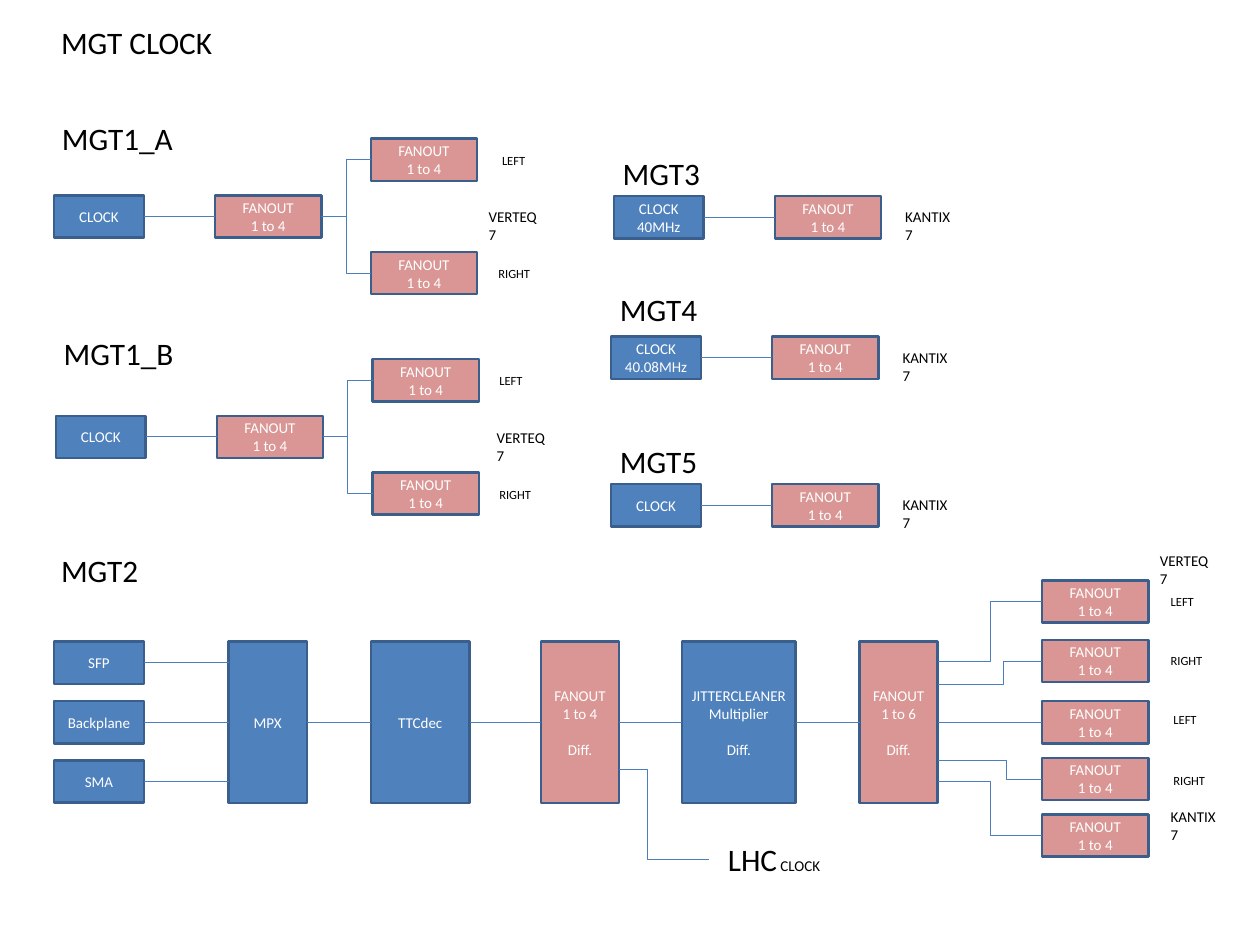
from lxml import etree
from pptx import Presentation
from pptx.dml.color import RGBColor
from pptx.enum.shapes import MSO_CONNECTOR, MSO_SHAPE
from pptx.enum.text import MSO_ANCHOR, MSO_AUTO_SIZE, PP_ALIGN
from pptx.oxml.ns import qn
from pptx.util import Inches, Pt

STRAIGHT, ELBOW = MSO_CONNECTOR.STRAIGHT, MSO_CONNECTOR.ELBOW
RECTANGLE = MSO_SHAPE.RECTANGLE
MIDDLE = MSO_ANCHOR.MIDDLE
GROW = MSO_AUTO_SIZE.SHAPE_TO_FIT_TEXT
LEFT, CENTER = PP_ALIGN.LEFT, PP_ALIGN.CENTER
LEFT_SIDE, RIGHT_SIDE = 1, 3

COLORS = {"source": "4F81BD", "fanout": "D99694", "border": "3A5F8C",
          "wire": "4B7EBC", "light": "FFFFFF", "dark": "000000"}
FONT = "Calibri"
TITLE, BODY, SMALL = 25, 12, 10
SLIDE_W, SLIDE_H = Inches(14), Inches(10.5)
COLUMNS, ROWS = 140, 105
CLOCK_W, FANOUT_W, BOX_H = 10, 11.8, 4.7
LABEL_H = {TITLE: 5.2, BODY: 3, SMALL: 2.7}
CHIP_A, CHIP_B = "VERTEQ7", "KANTIX7"
FANOUT = ("FANOUT", "1 to 4")


def col(n):
    return round(SLIDE_W * n / COLUMNS)


def row(n):
    return round(SLIDE_H * n / ROWS)


def write(frame, lines, size=BODY, color="dark", align=LEFT, last_gap=0):
    """Fill a frame; a line is a string or a list of (text, size) runs."""
    for i, line in enumerate(lines):
        paragraph = frame.paragraphs[0] if i == 0 else frame.add_paragraph()
        paragraph.alignment = align
        for words, points in [(line, size)] if isinstance(line, str) else line:
            run = paragraph.add_run()
            run.text = words
            run.font.name = FONT
            run.font.size = Pt(points)
            run.font.color.rgb = RGBColor.from_string(COLORS[color])
    if last_gap:
        paragraph.space_before = Pt(last_gap)


def label(slide, x, y, width, line, size=BODY):
    box = slide.shapes.add_textbox(col(x), row(y), col(width), row(LABEL_H[size]))
    box.text_frame.word_wrap = False
    box.text_frame.auto_size = GROW
    write(box.text_frame, [line], size=size)


def block(slide, x, y, lines, fill="source", width=CLOCK_W, height=BOX_H, last_gap=0):
    box = slide.shapes.add_shape(RECTANGLE, col(x), row(y), col(width), row(height))
    box.shadow.inherit = False
    box.fill.solid()
    box.fill.fore_color.rgb = RGBColor.from_string(COLORS[fill])
    box.line.color.rgb = RGBColor.from_string(COLORS["border"])
    box.line.width = Pt(2)
    frame = box.text_frame
    frame.word_wrap = True
    frame.vertical_anchor = MIDDLE
    frame.margin_left = frame.margin_right = col(0.5)
    write(frame, lines, color="light", align=CENTER, last_gap=last_gap)
    return box


def fanout(slide, x, y):
    return block(slide, x, y, FANOUT, "fanout", FANOUT_W)


def wire(slide, start, end, bend=None):
    """Draw a thin wire; bend is the share of its width at which it turns."""
    kind = STRAIGHT if bend is None else ELBOW
    line = slide.shapes.add_connector(kind, *start, *end)
    line.line.color.rgb = RGBColor.from_string(COLORS["wire"])
    line.line.width = Pt(0.75)
    properties = line._element.spPr
    etree.SubElement(properties, qn("a:effectLst"))
    if bend is not None:
        adjustments = properties.find(qn("a:prstGeom")).get_or_add_avLst()
        etree.SubElement(adjustments, qn("a:gd"), name="adj1",
                         fmla=f"val {round(bend * 100000)}")
    return line


def right_middle(box):
    return box.left + box.width, box.top + box.height // 2


def left_middle(box):
    return box.left, box.top + box.height // 2


def join(slide, source, target, bend=None):
    """Wire the right side of one box to the left side of another."""
    line = wire(slide, right_middle(source), left_middle(target), bend)
    line.begin_connect(source, RIGHT_SIDE)
    line.end_connect(target, LEFT_SIDE)


def clock_tree(slide, x, y, name, title_rise, chip_x, side_x):
    """Clock to fanout to a left and a right fanout, from the clock's corner."""
    label(slide, x - 0.1, y - title_rise, 14.4, name, TITLE)
    clock = block(slide, x, y, ["CLOCK"])
    trunk = fanout(slide, x + 17.9, y)
    join(slide, clock, trunk)
    label(slide, x + chip_x, y + 0.9, 7.7, CHIP_A)
    for side, rise, width, side_col in zip(("LEFT", "RIGHT"), (-6.3, 6.3),
                                           (4.6, 5.6), side_x):
        join(slide, trunk, fanout(slide, x + 35.2, y + rise), bend=0.5)
        label(slide, x + side_col, y + rise + 1.1, width, side, SMALL)


def clock_pair(slide, x, y, name, clock_lines, title_rise=5.2):
    """Clock to one fanout, from the clock's corner."""
    label(slide, x, y - title_rise, 10.7, name, TITLE)
    clock = block(slide, x, y, clock_lines)
    join(slide, clock, fanout(slide, x + 17.9, y))
    label(slide, x + 31.4, y + 0.8, 7.8, CHIP_B)


def outputs(slide, x, y, splitter):
    """The five fanouts fed by the splitter, with their labels."""
    # rise of box, rise of exit (None: middle), bend, side, its offset and width
    branches = [(-6.8, 2.2, 0.5, "LEFT", 13.3, 1, 4.6),
                (-0.2, 4.8, 0.63, "RIGHT", 13.3, 1, 5.6),
                (6.6, None, None, "LEFT", 13.6, 0.7, 4.6),
                (12.9, 13.2, 0.66, "RIGHT", 13.6, 1.2, 5.6),
                (19.2, 15.5, 0.5, None, 0, 0, 0)]
    for rise, exit_row, bend, side, side_x, side_y, width in branches:
        leaf = fanout(slide, x, y + rise)
        if exit_row is None:
            join(slide, splitter, leaf)
        else:
            start = splitter.left + splitter.width, row(y + exit_row)
            wire(slide, start, left_middle(leaf), bend).end_connect(leaf, LEFT_SIDE)
        if side:
            label(slide, x + side_x, y + rise + side_y, width, side, SMALL)
    label(slide, x + 12.1, y - 10.5, 7.7, CHIP_A)
    label(slide, x + 13.3, y + 17.9, 7.8, CHIP_B)


def clock_chain(slide, x, y):
    """MGT2: inputs, stages and outputs, from the first input's corner."""
    label(slide, x - 0.2, y - 10.5, 10.7, "MGT2", TITLE)
    stages = [(19.4, 8.7, ["MPX"], "source"),
              (35.2, 11, ["TTCdec"], "source"),
              (54.1, 8.7, [*FANOUT, "Diff."], "fanout"),
              (69.8, 12.6, ["JITTERCLEANER", "Multiplier", "Diff."], "source"),
              (89.5, 8.7, ["FANOUT", "1 to 6", "Diff."], "fanout")]
    chain = [block(slide, x + dx, y, lines, fill, width, 17.9,
                   last_gap=14.6 if len(lines) > 1 else 0)
             for dx, width, lines, fill in stages]
    for source, target in zip(chain, chain[1:]):
        join(slide, source, target)
    mpx, _, lhc_tap, _, splitter = chain

    for i, name in enumerate(("SFP", "Backplane", "SMA")):
        entry = block(slide, x, y + 6.6 * i, [name])
        if i == 1:
            join(slide, entry, mpx)
        else:
            start = right_middle(entry)
            wire(slide, start, (mpx.left, start[1])).begin_connect(entry, RIGHT_SIDE)

    wire(slide, (lhc_tap.left + lhc_tap.width, row(y + 14.2)),
         (col(x + 72.8), row(y + 24.2)), bend=0.31)
    label(slide, x + 73.9, y + 21.6, 12.4, [("LHC", TITLE), (" CLOCK", BODY)], TITLE)
    outputs(slide, x + 109.8, y, splitter)


def main():
    deck = Presentation()
    deck.slide_width, deck.slide_height = SLIDE_W, SLIDE_H
    slide = deck.slides.add_slide(deck.slide_layouts[6])
    label(slide, 5.8, 2.1, 19, "MGT CLOCK", TITLE)
    clock_tree(slide, 6, 21.7, "MGT1_A", 8.9, 47.3, (48.8, 48.4))
    clock_tree(slide, 6.2, 46.2, "MGT1_B", 9.6, 48, (48.3, 48.3))
    clock_pair(slide, 68.2, 21.8, "MGT3", ["CLOCK", "40MHz"])
    clock_pair(slide, 67.9, 37.4, "MGT4", ["CLOCK", "40.08MHz"], title_rise=5.6)
    clock_pair(slide, 67.9, 53.8, "MGT5", ["CLOCK"])
    clock_chain(slide, 6, 71.3)
    deck.save("out.pptx")


if __name__ == "__main__":
    main()
